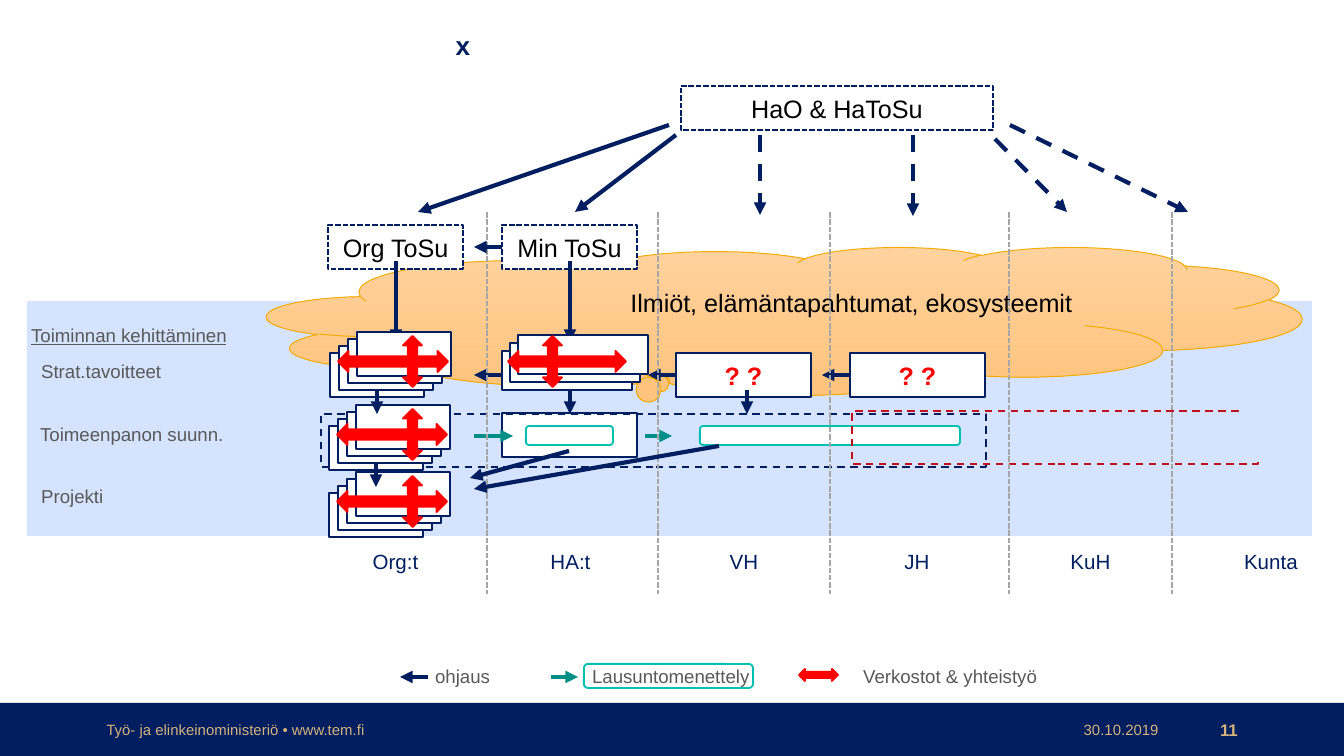
import pptx
import pptx.util
from lxml import etree
from pptx.dml.color import RGBColor
from pptx.enum.dml import MSO_LINE
from pptx.enum.shapes import MSO_CONNECTOR, MSO_SHAPE
from pptx.enum.text import MSO_ANCHOR, MSO_AUTO_SIZE, PP_ALIGN
from pptx.oxml.ns import qn

PX = 9144000 / 1344
NAVY, GOLD, GRAY, BAND = "001E60", "D5B37A", "595959", "D6E3FF"
RED, TURQUOISE, TEAL, WHITE, BLACK = "FF0000", "00BFB3", "008F86", "FFFFFF", "000000"


def px(value):
    return pptx.util.Emu(round(value * PX))


def color(hex_code):
    return RGBColor.from_string(hex_code)


def write(frame, text, size=10, ink=GRAY, bold=False, underline=False,
          align=PP_ALIGN.LEFT, anchor=MSO_ANCHOR.TOP, wrap=True):
    frame.word_wrap = wrap
    frame.vertical_anchor = anchor
    if not wrap:
        frame.auto_size = MSO_AUTO_SIZE.SHAPE_TO_FIT_TEXT
    paragraph = frame.paragraphs[0]
    paragraph.alignment = align
    run = paragraph.add_run()
    run.text = text
    run.font.name = "Arial"
    run.font.size = pptx.util.Pt(size)
    run.font.bold = bold
    run.font.underline = underline
    run.font.color.rgb = color(ink)


def add_label(slide, text, box, **style):
    label = slide.shapes.add_textbox(*map(px, box))
    write(label.text_frame, text, **style)


def add_block(slide, box, fill=WHITE, line=NAVY, dash=None, kind=MSO_SHAPE.RECTANGLE,
              weight=1, text=None, **style):
    """Add a preset shape; fill or line None leaves that part out."""
    block = slide.shapes.add_shape(kind, *map(px, box))
    block.shadow.inherit = False
    if fill:
        block.fill.solid()
        block.fill.fore_color.rgb = color(fill)
    else:
        block.fill.background()
    if line:
        block.line.color.rgb = color(line)
        block.line.width = pptx.util.Pt(weight)
        block.line.dash_style = dash
    else:
        block.line.fill.background()
    if text:
        write(block.text_frame, text, align=PP_ALIGN.CENTER,
              anchor=MSO_ANCHOR.MIDDLE, size=13.5, **style)
    return block


def add_line(slide, start, end, ink=NAVY, weight=2.25, dash=None, arrow=True):
    line = slide.shapes.add_connector(MSO_CONNECTOR.STRAIGHT, *map(px, start + end))
    line.line.color.rgb = color(ink)
    line.line.width = pptx.util.Pt(weight)
    if dash:
        line.line.dash_style = dash
    properties = line.element.spPr
    if arrow:
        etree.SubElement(properties.find(qn("a:ln")), qn("a:tailEnd"), type="triangle")
    etree.SubElement(properties, qn("a:effectLst"))


def add_network_arrow(slide, box, rotation=0):
    arrow = add_block(slide, box, fill=RED, line=RED, kind=MSO_SHAPE.LEFT_RIGHT_ARROW)
    arrow.rotation = rotation


def add_stack(slide, left, top, width, height, count, step):
    """Add overlapping cards, each one up and to the right of the one before."""
    for i in range(count):
        add_block(slide, (left + i * step[0], top - i * step[1], width, height))


def add_cloud(slide):
    cloud = add_block(slide, (267, 247, 1035, 148), line="F2A900", weight=0.5,
                      kind=MSO_SHAPE.CLOUD_CALLOUT)
    cloud.adjustments[0] = -0.115
    cloud.adjustments[1] = 0.407
    cloud.fill.gradient()
    cloud.fill.gradient_angle = 270
    for stop, shade, position in zip(cloud.fill.gradient_stops, ("FFD29E", "FEC37C"), (0, 1)):
        stop.color.rgb = color(shade)
        stop.position = position
    cloud.text_frame.margin_bottom = px(36)
    write(cloud.text_frame, "Ilmiöt, elämäntapahtumat, ekosysteemit", size=13.5, ink=BLACK,
          align=PP_ALIGN.RIGHT, anchor=MSO_ANCHOR.MIDDLE)


def add_plans(slide):
    add_block(slide, (502, 413, 135, 44))
    add_block(slide, (321, 414, 665, 53), fill=None, dash=MSO_LINE.DASH)
    for left in (676, 850):
        add_block(slide, (left, 353, 135, 44), text="? ?", ink=RED, bold=True)
    for left, top, width, height in ((526, 426, 87, 19), (700, 426, 260, 19),
                                     (584, 664, 169, 24)):
        add_block(slide, (left, top, width, height), line=TURQUOISE,
                  kind=MSO_SHAPE.ROUNDED_RECTANGLE)
    add_block(slide, (852, 411, 406, 53), fill=None, line="C10F1D", dash=MSO_LINE.DASH)
    for left in (850, 676, 502):
        add_line(slide, (left, 375), (left - 28, 375))
    for x, y in ((377, 452), (570, 390), (747, 390)):
        add_line(slide, (x, y), (x, y + 24))
    for start, end, y in ((474, 513, 436), (645, 672, 436), (551, 578, 677)):
        add_line(slide, (start, y), (end, y), ink=TEAL)


def add_dividers(slide):
    for x in (487, 658, 830, 1009, 1172):
        add_line(slide, (x, 212), (x, 594), ink="A6A6A6", weight=1,
                 dash=MSO_LINE.SQUARE_DOT, arrow=False)
    add_block(slide, (1244, 405, 28, 52), fill=BAND, line=None)


def add_steering(slide):
    for text, box in (("HaO & HaToSu", (681, 86, 312, 44)),
                      ("Org ToSu", (328, 225, 135, 44)),
                      ("Min ToSu", (502, 225, 135, 44))):
        add_block(slide, box, dash=MSO_LINE.SQUARE_DOT, text=text, ink=BLACK)
    for start, end in (((676, 135), (575, 212)), ((669, 125), (418, 212)),
                       ((502, 247), (474, 247)), ((570, 261), (570, 342)),
                       ((396, 261), (396, 342))):
        add_line(slide, start, end)
    for start, end in (((760, 135), (760, 215)), ((913, 135), (913, 216)),
                       ((995, 139), (1067, 212)), ((1010, 125), (1188, 212))):
        add_line(slide, start, end, dash=MSO_LINE.DASH)


def add_organisations(slide):
    add_stack(slide, 502, 351, 130, 39, count=3, step=(8, 8))
    add_network_arrow(slide, (508, 351, 118, 21))
    add_network_arrow(slide, (527, 352, 51, 19), rotation=90)
    for left, top in ((330, 353), (329, 426), (329, 493)):
        add_stack(slide, left, top, 94, 44, count=4, step=(9, 7))
        add_network_arrow(slide, (left + 8, top - 2, 110, 21))
        add_network_arrow(slide, (387, top - 1, 51, 19), rotation=90)
    for start, end in (((377, 390), (377, 414)), ((376, 462), (376, 487)),
                       ((719, 446), (474, 489)), ((569, 451), (470, 478))):
        add_line(slide, start, end)


def add_labels(slide):
    for text, center, width in (("Org:t", 395, 73), ("HA:t", 570, 67), ("VH", 744, 56),
                                ("JH", 917, 52), ("KuH", 1090, 67), ("Kunta", 1271, 82)):
        add_label(slide, text, (center - width // 2, 542, width, 39), size=11, ink=NAVY,
                  align=PP_ALIGN.CENTER, wrap=False)
    for text, left, top, width in (("Strat.tavoitteet", 28, 353, 148),
                                   ("Toimeenpanon suunn.", 27, 416, 213),
                                   ("Projekti", 28, 478, 90),
                                   ("ohjaus", 422, 658, 82),
                                   ("Lausuntomenettely", 579, 658, 185),
                                   ("Verkostot & yhteistyö", 850, 658, 202)):
        add_label(slide, text, (left, top, width, 36), wrap=False)
    add_label(slide, "Toiminnan kehittäminen", (18, 317, 226, 36), underline=True, wrap=False)
    add_label(slide, "x", (442, 23, 42, 46), size=14, ink=NAVY, bold=True,
              align=PP_ALIGN.CENTER, wrap=False)
    add_line(slide, (428, 677), (400, 677))
    add_network_arrow(slide, (799, 669, 39, 12))


def add_footer(slide):
    add_block(slide, (0, 703, 1344, 53), fill=NAVY, line=None)
    footer = {"ink": GOLD, "anchor": MSO_ANCHOR.MIDDLE}
    add_label(slide, "Työ- ja elinkeinoministeriö • www.tem.fi", (93, 718, 453, 23),
              size=8, **footer)
    add_label(slide, "30.10.2019", (1068, 718, 104, 23), size=8,
              align=PP_ALIGN.RIGHT, **footer)
    add_label(slide, "11", (1172, 718, 79, 23), size=9, bold=True,
              align=PP_ALIGN.RIGHT, **footer)


def main():
    deck = pptx.Presentation()
    deck.slide_width, deck.slide_height = px(1344), px(756)
    slide = deck.slides.add_slide(deck.slide_layouts[6])
    add_footer(slide)
    add_block(slide, (27, 301, 1285, 235), fill=BAND, line=None)
    add_cloud(slide)
    add_plans(slide)
    add_dividers(slide)
    add_steering(slide)
    add_organisations(slide)
    add_labels(slide)
    deck.save("out.pptx")


if __name__ == "__main__":
    main()
